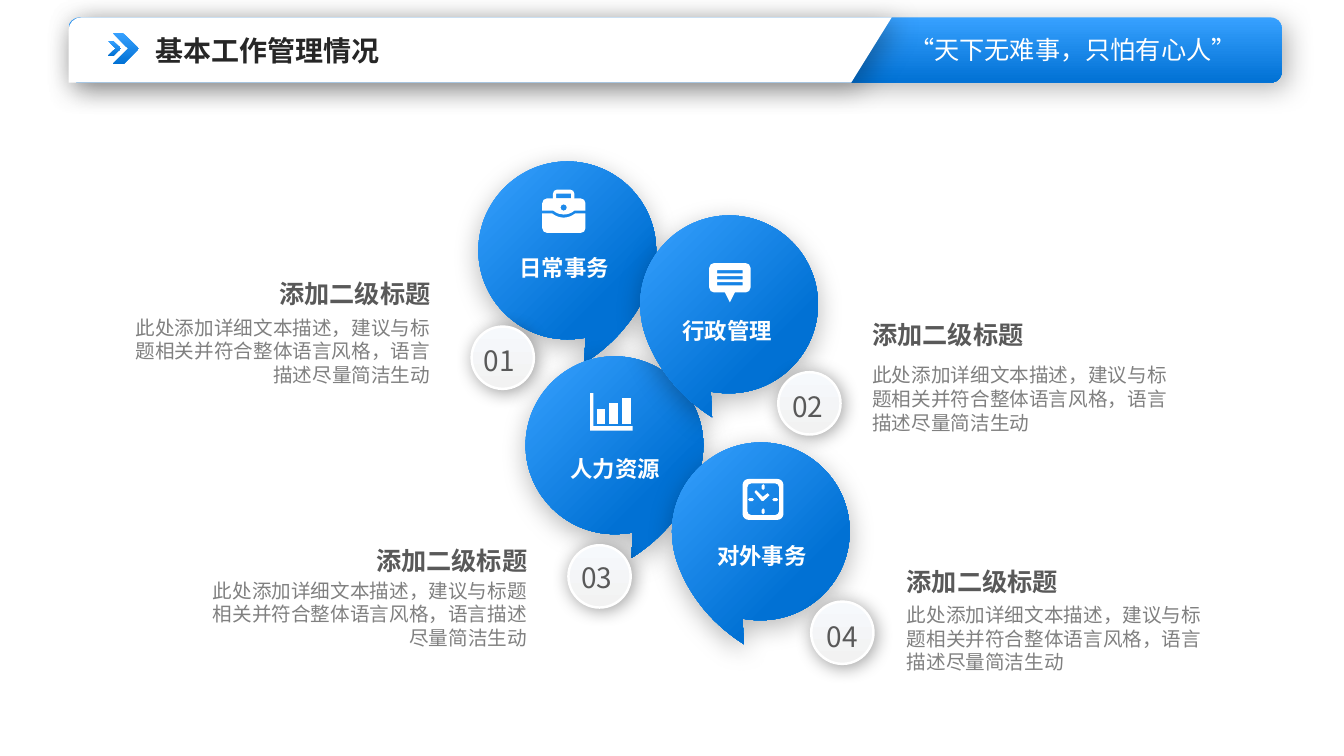
from lxml.etree import SubElement
from pptx import Presentation
from pptx.dml.color import RGBColor
from pptx.enum.shapes import MSO_SHAPE as SHAPE
from pptx.enum.text import MSO_ANCHOR as ANCHOR, MSO_AUTO_SIZE as AUTO, PP_ALIGN as ALIGN
from pptx.oxml.ns import qn
from pptx.util import Cm, Pt

FONT = "Noto Sans CJK SC"
LINE = 1.21  # line height, in font sizes
COLORS = {
    "white": "FFFFFF", "light_blue": "37A1FF", "blue": "0171D4",
    "badge_top": "F6F9FC", "badge_bottom": "F2F2F2",
    "title": "262626", "heading": "595959", "body": "808080",
}
HEADING = "添加二级标题"
BODY = "此处添加详细文本描述，建议与标题相关并符合整体语言风格，语言描述尽量简洁生动"

# Shadow: opacity %, blur pt, distance pt, direction in degrees
BAR_SHADOW = (30, 20, 5, 45)
BUBBLE_SHADOW = (28, 19, 5, 90)
BADGE_SHADOW = (39, 13, 2, 45)

# Bubbles, back to front: centre x, centre y, tail side (1 left, -1 right)
BUBBLES = [(14.30, 6.31, -1), (15.49, 11.22, -1), (19.18, 13.39, 1), (18.38, 7.67, 1)]
LABELS = [("日常事务", 12.85, 6.27), ("行政管理", 16.96, 7.85),
          ("人力资源", 14.13, 11.33), ("对外事务", 17.83, 13.54)]
# Badges: number, circle left and top, text left and top
BADGES = [("01", 11.89, 8.23, 11.44, 8.53), ("02", 19.62, 9.38, 19.22, 9.68),
          ("03", 14.33, 13.74, 13.90, 14.00), ("04", 20.45, 15.16, 20.09, 15.47)]
# Notes: left, heading top, body top, body width, alignment
NOTES = [(3.10, 6.88, 7.82, 8.00, ALIGN.RIGHT), (21.74, 7.92, 9.02, 8.05, ALIGN.LEFT),
         (5.08, 13.61, 14.45, 8.46, ALIGN.RIGHT), (22.61, 14.15, 15.06, 8.00, ALIGN.LEFT)]


def rgb(name):
    return RGBColor.from_string(COLORS[name])


# Outlines in cm: each step is a tuple of one point (line) or three points (curve)
def lines(*points):
    return [(pt,) for pt in points]


def corner(start, bend, end):
    """Quarter-ellipse curve from start to end that turns at bend."""
    first, second = (tuple(a + 0.55 * (b - a) for a, b in zip(pt, bend)) for pt in (start, end))
    return (first, second, end)


def rounded(x, y, w, h, r=0.0):
    right, bottom = x + w, y + h
    if not r:
        return lines((x, y), (right, y), (right, bottom), (x, bottom))
    turns = [((x, y + r), (x, y), (x + r, y)),
             ((right - r, y), (right, y), (right, y + r)),
             ((right, bottom - r), (right, bottom), (right - r, bottom)),
             ((x + r, bottom), (x, bottom), (x, bottom - r))]
    return [step for turn in turns for step in (turn[:1], corner(*turn))]


# Formatting
def paint(sp, *colors, angle=90, end=1.0):
    sp.shadow.inherit = False
    sp.line.fill.background()
    if len(colors) == 1:
        sp.fill.solid()
        sp.fill.fore_color.rgb = rgb(colors[0])
        return
    sp.fill.gradient()
    sp.fill.gradient_angle = 360 - angle
    for stop, color, position in zip(sp.fill.gradient_stops, colors, (0, end)):
        stop.color.rgb = rgb(color)
        stop.position = position


def cast_shadow(sp, opacity, blur, dist, direction):
    effects = sp.element.spPr.find(qn("a:effectLst"))
    shadow = SubElement(effects, qn("a:outerShdw"), blurRad=str(Pt(blur)), dist=str(Pt(dist)),
                        dir=str(direction * 60000), algn="ctr", rotWithShape="0")
    color = SubElement(shadow, qn("a:srgbClr"), val="000000")
    SubElement(color, qn("a:alpha"), val=str(opacity * 1000))


def write(tf, text, size, color, bold=False, align=ALIGN.LEFT):
    tf.text = text
    p = tf.paragraphs[0]
    p.alignment = align
    p.line_spacing = Pt(size * LINE)
    p.font.size, p.font.bold, p.font.name = Pt(size), bold, FONT
    p.font.color.rgb = rgb(color)
    SubElement(p._p.pPr.find(qn("a:defRPr")), qn("a:ea"), typeface=FONT)


# Elements
def add_text(s, box, text, size, color, wrap=True, **style):
    tf = s.shapes.add_textbox(*map(Cm, box)).text_frame
    tf.word_wrap = wrap
    write(tf, text, size, color, **style)


def add_preset(s, kind, box, *colors):
    sp = s.shapes.add_shape(kind, *map(Cm, box))
    paint(sp, *colors)
    return sp


def add_outline(s, *contours):
    """Draws a white outline; contours after the first cut holes or fill inside them."""
    builder = None
    for contour in contours:
        start, *rest = [(Cm(x), Cm(y)) for step in contour for x, y in step]
        if builder:
            builder.move_to(*start)
        else:
            builder = s.shapes.build_freeform(*start, scale=1.0)
        builder.add_line_segments(rest, close=True)
    sp = builder.convert_to_shape()
    paint(sp, "white")

    # Join three segments into one curve where a step has three points
    segments = iter(list(sp.element.iter(qn("a:lnTo"))))
    for contour in contours:
        for step in contour[1:]:
            first, *others = [next(segments) for _ in step]
            if others:
                first.tag = qn("a:cubicBezTo")
            for other in others:
                first.append(other[0])
                other.getparent().remove(other)
        if contour[-1][-1] != contour[0][0] and len(contour[0]) > 1:
            raise ValueError("a contour starts with one point")
    return sp


def add_bubble(s, cx, cy, side):
    r = 2.24
    drop = [((-r, 0),), corner((-r, 0), (-r, -r), (0, -r)), corner((0, -r), (r, -r), (r, 0)),
            corner((r, 0), (r, r), (0, r)), ((-0.15, r), (-0.3, 2.23), (-0.46, 2.2)),
            ((-0.43, 2.84),), ((-1.55, 2.13), (-1.96, 1.19), (-2.08, 0.86)),
            ((-2.18, 0.61), (-r, 0.3), (-r, 0))]
    sp = add_outline(s, [tuple((cx + side * x, cy + y) for x, y in step) for step in drop])
    paint(sp, "light_blue", "blue", angle=45, end=0.7)
    cast_shadow(sp, *BUBBLE_SHADOW)


def add_badge(s, number, x, y, text_x, text_y):
    sp = add_preset(s, SHAPE.OVAL, (x, y, 1.57, 1.57), "badge_top", "badge_bottom")
    sp.line.color.rgb = rgb("white")
    sp.line.width = Pt(1.75)
    cast_shadow(sp, *BADGE_SHADOW)
    add_text(s, (text_x, text_y, 2.29, 1.12), number, 20, "heading", align=ALIGN.CENTER)


def add_note(s, x, heading_y, body_y, width, align):
    heading_w = 6.05
    heading_x = x + width - heading_w if align == ALIGN.RIGHT else x
    add_text(s, (x, body_y, width, 2.06), BODY, 14, "body", align=align)
    add_text(s, (heading_x, heading_y, heading_w, 1.02), HEADING, 18, "heading",
             bold=True, align=align)


def add_header(s):
    blues = ("light_blue", "blue")
    bar = add_preset(s, SHAPE.ROUNDED_RECTANGLE, (1.73, 0.44, 30.58, 1.64), *blues)
    panel = add_outline(s, lines((2.05, 0.44), (22.48, 0.44), (21.46, 2.08), (1.73, 2.08),
                                 (1.73, 0.76)) + [corner((1.73, 0.76), (1.73, 0.44), (2.05, 0.44))])
    for sp in (bar, panel):
        cast_shadow(sp, *BAR_SHADOW)
    add_text(s, (21.98, 0.74, 10.13, 1.02), "“天下无难事，只怕有心人”", 18, "white",
             align=ALIGN.CENTER)
    for box in ((2.84, 0.83, 0.66, 0.79), (2.72, 1.03, 0.33, 0.38)):
        add_preset(s, SHAPE.CHEVRON, box, *blues).adjustments[0] = 0.6

    # Title placeholder, brought in front of the bar
    title = s.shapes.title
    title.element.getparent().append(title.element)
    title.left, title.top, title.width, title.height = map(Cm, (3.74, 0.74, 7.01, 1.04))
    tf = title.text_frame
    tf.margin_left = tf.margin_right = Cm(0.18)
    tf.margin_top = tf.margin_bottom = Cm(0.1)
    tf.vertical_anchor, tf.auto_size = ANCHOR.TOP, AUTO.NONE
    write(tf, "基本工作管理情况", 20, "title", bold=True)


def add_icons(s):
    # Briefcase: handle, flap with clasp, body
    add_outline(s, rounded(13.94, 4.78, 0.54, 0.32, 0.1), rounded(14.02, 4.88, 0.38, 0.12))
    add_outline(s, [((13.67, 5.31),), ((13.67, 5.12),),
                    corner((13.67, 5.12), (13.67, 5.0), (13.79, 5.0)), ((14.64, 5.0),),
                    corner((14.64, 5.0), (14.76, 5.0), (14.76, 5.12)), ((14.76, 5.31),),
                    ((14.48, 5.31),), ((14.32, 5.44), (14.1, 5.44), (13.95, 5.31))],
                rounded(14.13, 5.15, 0.16, 0.16, 0.08))
    add_outline(s, [((13.67, 5.38),), ((13.92, 5.38),),
                    ((14.1, 5.52), (14.32, 5.52), (14.5, 5.38)), ((14.76, 5.38),),
                    ((14.76, 5.75),), corner((14.76, 5.75), (14.76, 5.87), (14.64, 5.87)),
                    ((13.79, 5.87),), corner((13.79, 5.87), (13.67, 5.87), (13.67, 5.75))])
    # Speech balloon with three lines
    add_outline(s, lines((18.26, 7.34), (18.54, 7.34), (18.4, 7.62)))
    add_outline(s, rounded(17.88, 6.63, 1.04, 0.74, 0.12),
                *(rounded(18.08, 6.81 + 0.15 * i, 0.64, 0.08) for i in range(3)))
    # Bar chart
    for i, top in enumerate((10.31, 10.16, 10.03)):
        add_outline(s, rounded(15.04 + 0.32 * i, top, 0.22, 10.69 - top))
    add_outline(s, lines((14.88, 9.91), (14.96, 9.91), (14.96, 10.74),
                         (15.95, 10.74), (15.95, 10.85), (14.88, 10.85)))
    # Clock: frame, ticks and hands
    add_outline(s, rounded(18.72, 12.07, 1.03, 1.03, 0.15), rounded(18.84, 12.18, 0.8, 0.8, 0.1),
                *(rounded(19.2, y, 0.08, 0.15, 0.04) for y in (12.2, 12.81)),
                *(rounded(x, 12.55, 0.15, 0.08, 0.04) for x in (18.86, 19.47)),
                lines((19.02, 12.4), (19.06, 12.35), (19.23, 12.52), (19.35, 12.43),
                      (19.4, 12.48), (19.25, 12.62), (19.2, 12.62)))


def main():
    prs = Presentation()
    prs.slide_width, prs.slide_height = Cm(33.88), Cm(19.05)
    s = prs.slides.add_slide(prs.slide_layouts[5])

    # White backdrop
    add_preset(s, SHAPE.RECTANGLE, (0, 0, 33.88, 19.05), "white")
    add_header(s)
    for bubble in BUBBLES:
        add_bubble(s, *bubble)
    add_icons(s)
    for text, x, y in LABELS:
        add_text(s, (x, y, 2.79, 0.94), text, 16, "white", wrap=False, bold=True)
    for badge in BADGES:
        add_badge(s, *badge)
    for note in NOTES:
        add_note(s, *note)
    prs.save("out.pptx")


if __name__ == "__main__":
    main()
